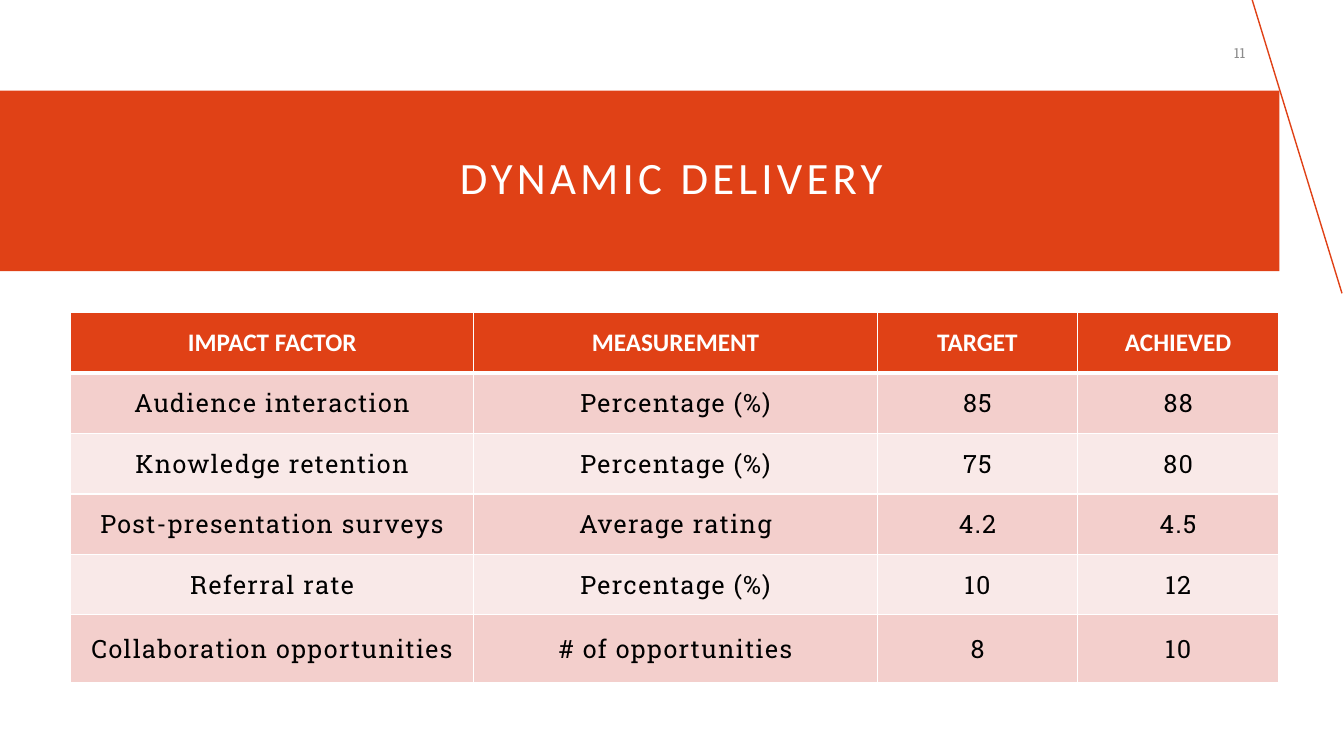
from lxml.etree import SubElement
from pptx import Presentation
from pptx.dml.color import RGBColor
from pptx.enum.shapes import MSO_CONNECTOR
from pptx.enum.text import MSO_ANCHOR, PP_ALIGN
from pptx.oxml.ns import qn
from pptx.util import Inches, Pt

RED, WHITE, BLACK, GRAY = "E04116", "FFFFFF", "000000", "8C8C8C"
BANDS = "F3CFCC", "F9E9E8"
SANS, SLAB = "Calibri", "Roboto Slab"

ROWS = [
    ("IMPACT FACTOR", "MEASUREMENT", "TARGET", "ACHIEVED"),
    ("Audience interaction", "Percentage (%)", "85", "88"),
    ("Knowledge retention", "Percentage (%)", "75", "80"),
    ("Post-presentation surveys", "Average rating", "4.2", "4.5"),
    ("Referral rate", "Percentage (%)", "10", "12"),
    ("Collaboration opportunities", "# of opportunities", "8", "10"),
]
WIDTHS = 4, 4, 1.99, 1.99
HEIGHTS = 0.6, 0.6, 0.6, 0.6, 0.6, 0.67


def color(code):
    return RGBColor.from_string(code)


def write(frame, text, size=18, font=SLAB, ink=BLACK, bold=False,
          align=PP_ALIGN.CENTER, gap=0, lead=None):
    """Fill a text frame; gap is the letter spacing in points."""
    frame.word_wrap = True
    para = frame.paragraphs[0]
    para.alignment = align
    if lead:
        para.line_spacing = lead
    run = para.add_run()
    run.text = text
    run.font.size = Pt(size)
    run.font.name = font
    run.font.bold = bold
    run.font.color.rgb = color(ink)
    if gap:
        run._r.get_or_add_rPr().set("spc", str(gap * 100))


def place(shape, left, top, width, height):
    shape.left, shape.top = Inches(left), Inches(top)
    shape.width, shape.height = Inches(width), Inches(height)


def add_title(slide, text):
    title = slide.shapes.title
    place(title, 0, 0.9, 12.69, 1.79)
    title.fill.solid()
    title.fill.fore_color.rgb = color(RED)
    frame = title.text_frame
    frame.vertical_anchor = MSO_ANCHOR.MIDDLE
    frame.margin_left = Inches(0.88)
    frame.margin_right = frame.margin_top = frame.margin_bottom = Inches(0.25)
    write(frame, text, size=32, font=SANS, ink=WHITE, gap=3, lead=0.85)


def add_slant(slide):
    line = slide.shapes.add_connector(
        MSO_CONNECTOR.STRAIGHT, Inches(12.42), 0, Inches(13.31), Inches(2.91))
    line.line.color.rgb = color(RED)
    line.line.width = Pt(1)
    SubElement(line._element.spPr, qn("a:effectLst"))


def add_edges(cell, top, bottom):
    """Draw white cell borders, with the top and bottom widths in points."""
    props = cell._tc.get_or_add_tcPr()
    for side, width in zip("LRTB", (1, 1, top, bottom)):
        edge = SubElement(props, qn(f"a:ln{side}"), w=str(Pt(width)))
        fill = SubElement(edge, qn("a:solidFill"))
        SubElement(fill, qn("a:srgbClr"), val=WHITE)


def add_grid(slide):
    grid = slide.shapes.add_table(
        len(ROWS), len(WIDTHS), Inches(0.7), Inches(3.1),
        Inches(sum(WIDTHS)), Inches(sum(HEIGHTS))).table
    for col, width in zip(grid.columns, WIDTHS):
        col.width = Inches(width)
    for row, height in zip(grid.rows, HEIGHTS):
        row.height = Inches(height)
    for r, texts in enumerate(ROWS):
        head = r == 0
        style = (dict(font=SANS, ink=WHITE, bold=True) if head
                 else dict(gap=1))
        for c, text in enumerate(texts):
            cell = grid.cell(r, c)
            add_edges(cell, top=3 if r == 1 else 1, bottom=3 if head else 1)
            cell.fill.solid()
            cell.fill.fore_color.rgb = color(RED if head else BANDS[(r - 1) % 2])
            cell.vertical_anchor = MSO_ANCHOR.MIDDLE
            write(cell.text_frame, text, **style)


def add_number(slide, text):
    box = slide.shapes.add_textbox(
        Inches(11.45), Inches(0.35), Inches(1), Inches(0.35))
    box.text_frame.vertical_anchor = MSO_ANCHOR.MIDDLE
    write(box.text_frame, text, size=10, ink=GRAY, align=PP_ALIGN.RIGHT)


def main():
    deck = Presentation()
    deck.slide_width, deck.slide_height = Inches(13.33), Inches(7.5)
    slide = deck.slides.add_slide(deck.slide_layouts[5])
    add_slant(slide)
    add_title(slide, "DYNAMIC DELIVERY")
    add_grid(slide)
    add_number(slide, "11")
    deck.save("out.pptx")


if __name__ == "__main__":
    main()
